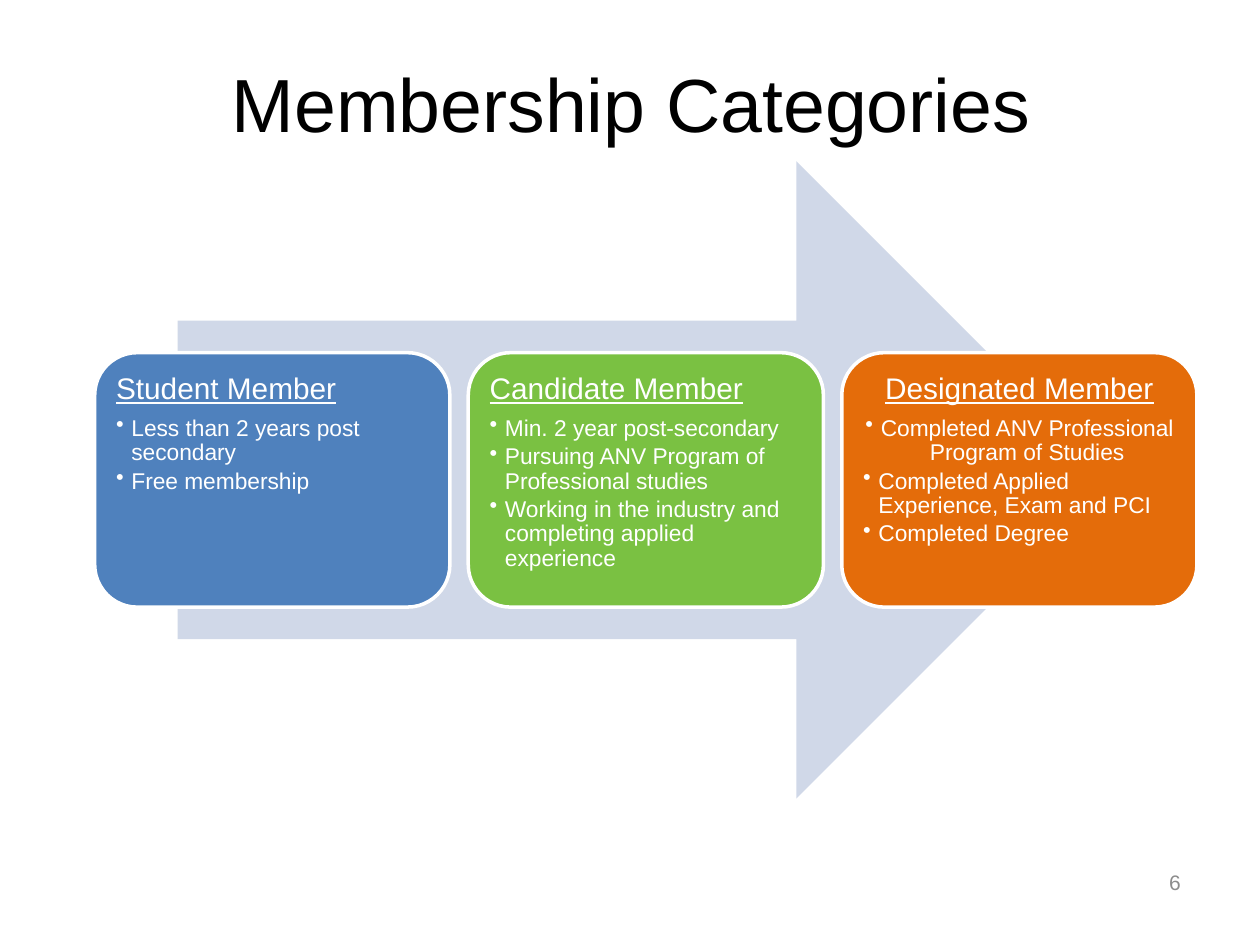
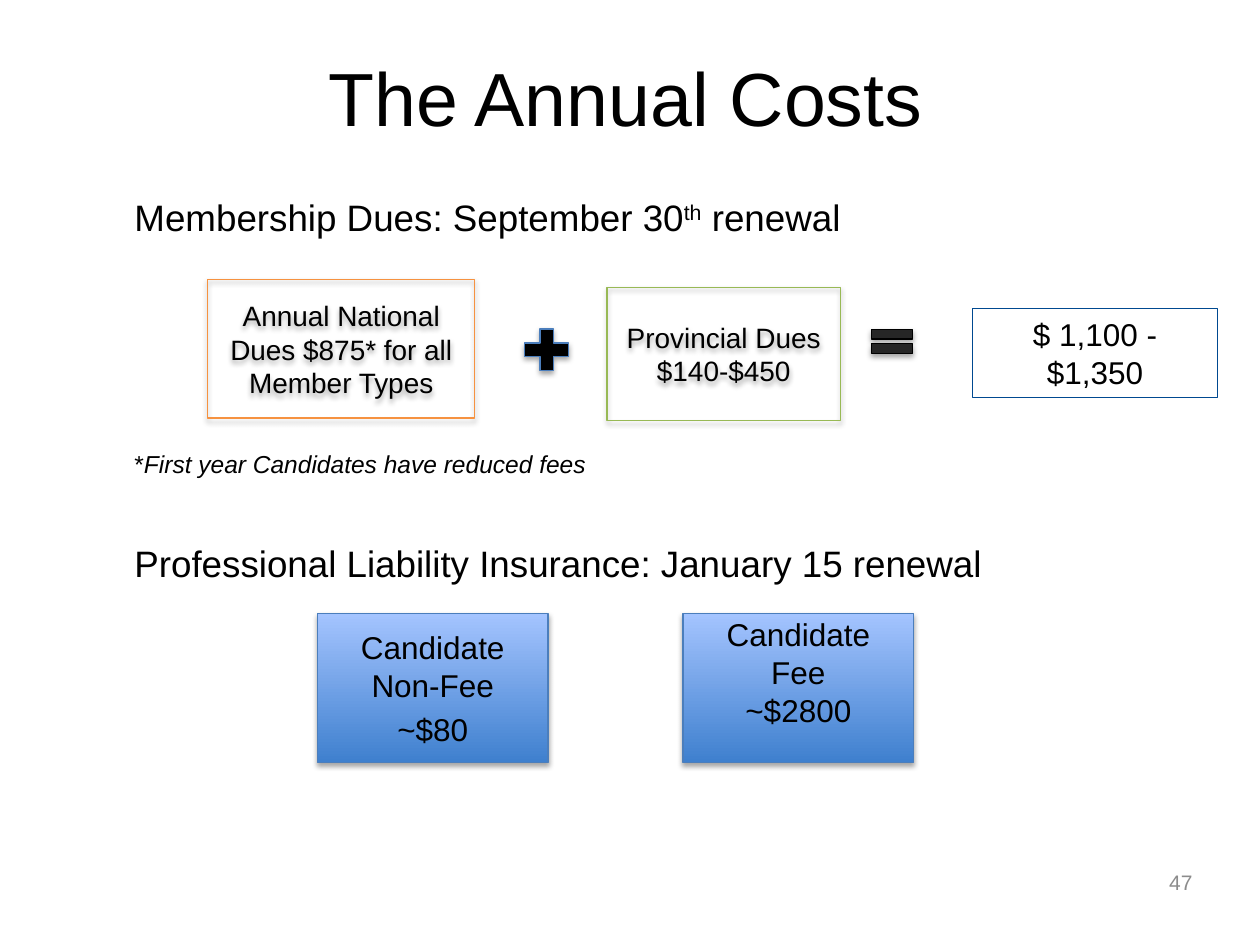
from dataclasses import dataclass

from lxml import etree
from pptx import Presentation
from pptx.dml.color import RGBColor
from pptx.enum.shapes import MSO_SHAPE as Kind
from pptx.enum.text import MSO_ANCHOR as Anchor, PP_ALIGN as Align
from pptx.oxml.ns import qn
from pptx.util import Cm, Pt


@dataclass(frozen=True)
class Theme:
    font: str = "Arial"
    ink: str = "000000"
    white: str = "FFFFFF"
    grey: str = "8C8C8C"
    pale: str = "D0D8E8"
    blue: str = "4F81BD"
    green: str = "7AC142"
    orange: str = "E46C0A"
    amber: str = "F69240"
    lime: str = "98B955"
    edge: str = "4B7EBC"
    navy: str = "004990"
    coal: str = "262626"
    deep: str = "3F80CE"
    sky: str = "A4C4FF"
    title: int = 43
    lead: int = 21
    cost: int = 18
    head: int = 17
    dues: int = 16
    note: int = 14
    point: int = 13
    page: int = 12


look = Theme()


def write(frame, text, size, color=look.ink, align=Align.LEFT, join=False, bullet=False,
          before=0, after=0, line=None, under=False, slant=False, base=0):
    """Add text as a new paragraph, or with join to the end of the last one."""
    para = frame.paragraphs[-1]
    if not join:
        if para.runs:
            para = frame.add_paragraph()
        if bullet:
            props = para._p.get_or_add_pPr()
            props.set("marL", str(Cm(0.31)))
            props.set("indent", str(-Cm(0.31)))
            etree.SubElement(props, qn("a:buChar")).set("char", "•")
        para.alignment = align
        para.space_before, para.space_after = Pt(before), Pt(after)
        if line:
            para.line_spacing = line
    run = para.add_run()
    run.text = text
    font = run.font
    font.name, font.size = look.font, Pt(size)
    font.color.rgb = RGBColor.from_string(color)
    font.underline, font.italic = under, slant
    if base:
        font._element.set("baseline", str(base * 1000))


def draw(slide, kind, spot, fill=None, edge=None, width=0.75, shade=False):
    """Add a preset shape; fill is None, a colour or a pair from bottom to top."""
    shape = slide.shapes.add_shape(kind, *map(Cm, spot))
    if fill is None:
        shape.fill.background()
    elif isinstance(fill, tuple):
        shape.fill.gradient()
        shape.fill.gradient_angle = 90
        for stop, tone in zip(shape.fill.gradient_stops, fill):
            stop.color.rgb = RGBColor.from_string(tone)
    else:
        shape.fill.solid()
        shape.fill.fore_color.rgb = RGBColor.from_string(fill)
    if edge:
        shape.line.color.rgb = RGBColor.from_string(edge)
        shape.line.width = Pt(width)
    else:
        shape.line.fill.background()
    shape.shadow.inherit = False
    if shade:
        glow = etree.SubElement(shape._element.spPr.find(qn("a:effectLst")), qn("a:outerShdw"),
                                blurRad=str(Pt(3.1)), dist=str(Pt(1.8)),
                                dir="5400000", rotWithShape="0")
        tone = etree.SubElement(glow, qn("a:srgbClr"), val=look.ink)
        etree.SubElement(tone, qn("a:alpha"), val="35000")
    shape.text_frame.word_wrap = True
    return shape


deck = Presentation()
deck.slide_width, deck.slide_height = Cm(25.4), Cm(19.05)

# Titles and page numbers
pages = []
for name, number, left, top in [("Membership Categories", "6", 2.57, 0.48),
                                ("The Annual Costs", "47", 2.46, 0.36)]:
    slide = deck.slides.add_slide(deck.slide_layouts[5])
    title = slide.shapes.title
    title.left, title.top, title.width, title.height = map(Cm, (left, top, 20.29, 3.18))
    title.text_frame.vertical_anchor = Anchor.MIDDLE
    write(title.text_frame, name, look.title, align=Align.CENTER)
    frame = slide.shapes.add_textbox(*map(Cm, (23.32, 17.27, 1.68, 1.02))).text_frame
    frame.word_wrap = True
    frame.vertical_anchor = Anchor.MIDDLE
    write(frame, number, look.page, look.grey)
    pages.append(slide)
types, costs = pages

# Membership categories: three cards on an arrow
draw(types, Kind.RIGHT_ARROW, (3.58, 3.25, 18.9, 12.85), look.pale)
cards = [
    ("Student Member", look.blue, Align.LEFT,
     ["Less than 2 years post secondary", "Free membership"]),
    ("Candidate Member", look.green, Align.LEFT,
     ["Min. 2 year post-secondary", "Pursuing ANV Program of Professional studies",
      "Working in the industry and completing applied experience"]),
    ("Designated Member", look.orange, Align.CENTER,
     ["Completed ANV Professional Program of Studies",
      "Completed Applied Experience, Exam and PCI", "Completed Degree"]),
]
for col, (head, fill, align, points) in enumerate(cards):
    card = draw(types, Kind.ROUNDED_RECTANGLE, (1.91 + 7.53 * col, 7.11, 7.16, 5.13),
                fill, look.white, 2)
    frame = card.text_frame
    frame.vertical_anchor = Anchor.TOP
    frame.margin_left = frame.margin_right = frame.margin_top = frame.margin_bottom = Cm(0.18)
    write(frame, head, look.head, look.white, align, after=6, line=0.9, under=True)
    for row, point in enumerate(points):
        write(frame, point, look.point, look.white, Align.LEFT if row else align,
              bullet=True, after=2, line=0.9)

# Annual costs: headings and note
frame = costs.shapes.add_textbox(*map(Cm, (2.46, 3.8, 20.55, 11.63))).text_frame
frame.word_wrap = True
write(frame, "Membership Dues: September 30", look.lead)
write(frame, "th", look.lead, join=True, base=30)
write(frame, " renewal", look.lead, join=True)
write(frame, "*", look.note, before=120)
write(frame, "First year Candidates have reduced fees", look.note, join=True, slant=True)
write(frame, "Professional Liability Insurance: January 15 renewal", look.lead, before=36)

# National dues + provincial dues = total
for text, spot, edge, size, shade, anchor in [
    ("Annual National Dues $875* for all Member Types", (4.19, 5.64, 5.38, 2.79),
     look.amber, look.dues, True, Anchor.MIDDLE),
    ("Provincial Dues $140-$450", (12.24, 5.79, 4.7, 2.69),
     look.lime, look.dues, True, Anchor.MIDDLE),
    ("$ 1,100 - $1,350", (19.61, 6.22, 4.93, 1.8),
     look.navy, look.cost, False, Anchor.TOP),
]:
    frame = draw(costs, Kind.RECTANGLE, spot, edge=edge, shade=shade).text_frame
    frame.vertical_anchor = anchor
    write(frame, text, size, align=Align.CENTER)
draw(costs, Kind.MATH_PLUS, (10.41, 6.48, 1.22, 1.14), look.ink, look.edge, shade=True)
draw(costs, Kind.MATH_EQUAL, (17.42, 6.48, 1.12, 0.81), look.coal, look.ink, shade=True)

# Insurance fees
for left, lines, anchor, gap in [
    (6.4, ["Candidate", "Non-Fee", "~$80"], Anchor.MIDDLE, 4),
    (13.77, ["Candidate", "Fee", "~$2800"], Anchor.TOP, 0),
]:
    frame = draw(costs, Kind.RECTANGLE, (left, 12.37, 4.65, 3), (look.deep, look.sky),
                 look.edge, shade=True).text_frame
    frame.vertical_anchor = anchor
    frame.margin_top = frame.margin_bottom = Cm(0.03)
    for text in lines:
        write(frame, text, look.cost, align=Align.CENTER,
              before=gap if text == lines[-1] else 0)

deck.save("out.pptx")
